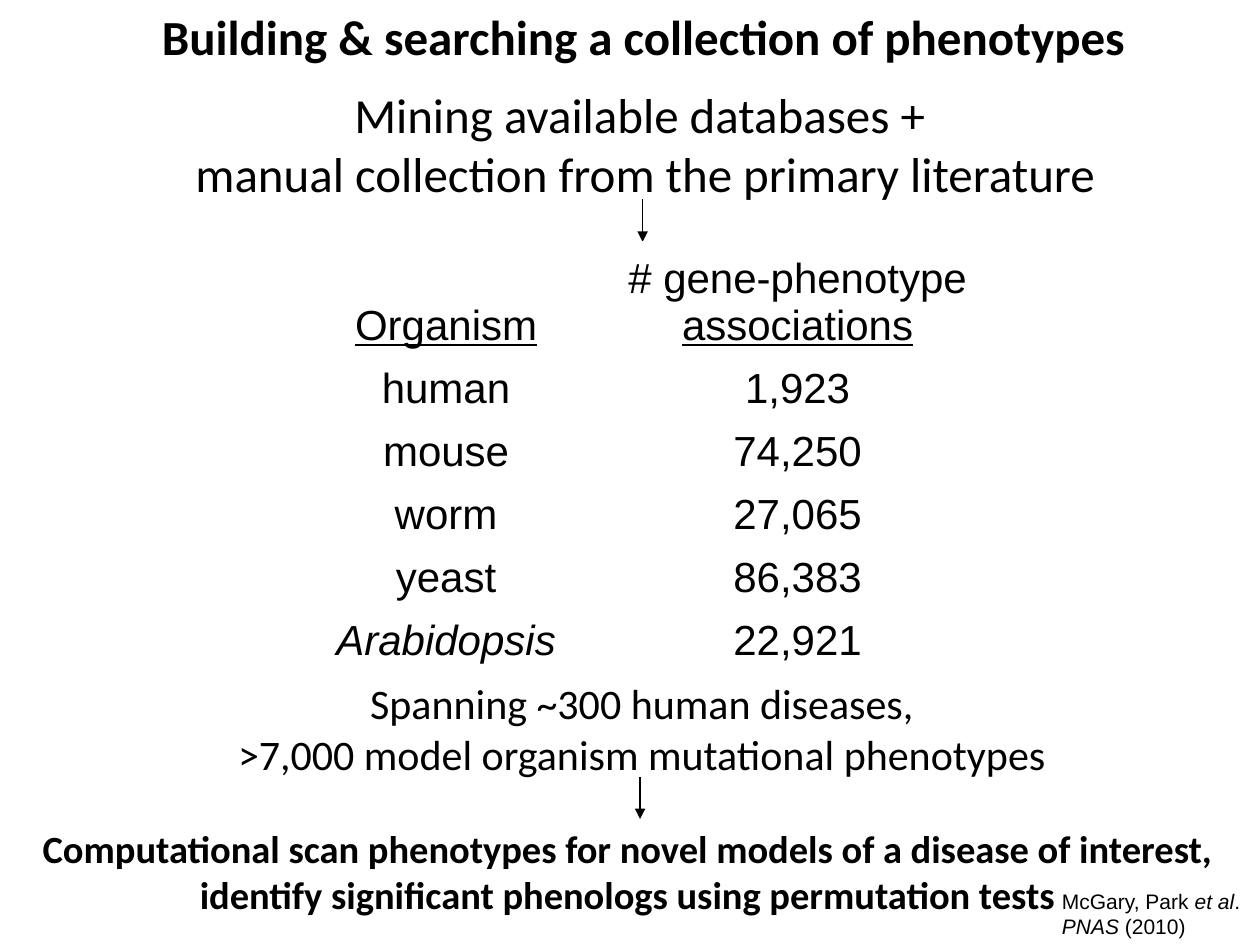
from pptx import Presentation
from pptx.dml.color import RGBColor
from pptx.enum.shapes import MSO_CONNECTOR
from pptx.enum.text import MSO_ANCHOR, MSO_AUTO_SIZE, PP_ALIGN
from pptx.oxml.ns import qn
from pptx.util import Inches, Pt
from lxml.etree import SubElement

BLACK = RGBColor(0, 0, 0)
ORGANISM_ROWS = [
    ("human", "1,923"),
    ("mouse", "74,250"),
    ("worm", "27,065"),
    ("yeast", "86,383"),
    ("Arabidopsis", "22,921"),
]


def add_span(para, text, size, font="Calibri", **styles):
    """Add one run; styles are font attributes such as bold or italic."""
    span = para.add_run()
    span.text = text
    span.font.name = font
    span.font.size = Pt(size)
    span.font.color.rgb = BLACK
    for name, value in styles.items():
        setattr(span.font, name, value)


def place(box, left, top, width, height):
    box.left, box.top = Inches(left), Inches(top)
    box.width, box.height = Inches(width), Inches(height)


def write_lines(box, lines, size, align=PP_ALIGN.CENTER, font="Calibri", bold=False):
    """Write paragraphs, each given as a list of (text, italic) spans."""
    frame = box.text_frame
    frame.word_wrap = False
    frame.auto_size = MSO_AUTO_SIZE.SHAPE_TO_FIT_TEXT
    frame.vertical_anchor = MSO_ANCHOR.TOP
    for index, spans in enumerate(lines):
        para = frame.add_paragraph() if index else frame.paragraphs[0]
        para.alignment = align
        for text, italic in spans:
            add_span(para, text, size, font, bold=bold, italic=italic)


def add_text(page, bounds, lines, size, **options):
    box = page.shapes.add_textbox(*map(Inches, bounds))
    write_lines(box, lines, size, **options)


def add_down_arrow(page, x, top, bottom):
    arrow = page.shapes.add_connector(
        MSO_CONNECTOR.STRAIGHT, Inches(x), Inches(top), Inches(x), Inches(bottom))
    arrow.line.color.rgb = BLACK
    arrow.line.width = Pt(0.75)
    SubElement(arrow.line._get_or_add_ln(), qn("a:tailEnd"), type="triangle")
    SubElement(arrow._element.spPr, qn("a:effectLst"))


def write_cell(cell, spans):
    """Write (text, styles) spans centred at the bottom of an unfilled cell."""
    cell.fill.background()
    cell.vertical_anchor = MSO_ANCHOR.BOTTOM
    para = cell.text_frame.paragraphs[0]
    para.alignment = PP_ALIGN.CENTER
    for text, styles in spans:
        add_span(para, text, 24, "Arial", **styles)


def add_association_table(page):
    row_count = len(ORGANISM_ROWS) + 1
    table = page.shapes.add_table(
        row_count, 2, Inches(2.5), Inches(1.92), Inches(5.58), Inches(3.13)).table
    table.first_row = False
    table.horz_banding = False
    for column, width in zip(table.columns, (2.08, 3.5)):
        column.width = Inches(width)
    for index, row in enumerate(table.rows):
        row.height = Inches(0.46 if index else 0.83)

    underlined = {"underline": True}
    write_cell(table.cell(0, 0), [("Organism", underlined)])
    write_cell(table.cell(0, 1),
               [("# gene-phenotype", {}), (" associations", underlined)])
    for index, (organism, count) in enumerate(ORGANISM_ROWS, start=1):
        styles = {"italic": organism == "Arabidopsis"}
        write_cell(table.cell(index, 0), [(organism, styles)])
        write_cell(table.cell(index, 1), [(count, {})])


def main():
    deck = Presentation()
    deck.slide_width, deck.slide_height = Inches(10), Inches(7.5)
    page = deck.slides.add_slide(deck.slide_layouts[5])

    title = page.shapes.title
    place(title, 1.14, 0, 7.93, 0.57)
    write_lines(title, [[("Building & searching a collection of phenotypes", False)]],
                28, bold=True)

    add_down_arrow(page, 5.1, 1.58, 1.92)
    add_association_table(page)
    add_text(page, (1.76, 5.33, 6.67, 0.91), [
        [("Spanning ~300 human diseases,", False)],
        [(">7,000 model organism mutational phenotypes", False)],
    ], 24)
    add_text(page, (1.41, 0.62, 7.42, 1.04), [
        [("Mining available databases + ", False)],
        [("manual collection from the primary literature", False)],
    ], 28)
    add_text(page, (0.18, 6.5, 9.6, 0.84), [
        [("Computational scan phenotypes for novel models of a disease of interest,", False)],
        [("identify significant phenologs using permutation tests", False)],
    ], 22, bold=True)
    add_down_arrow(page, 5.08, 6.17, 6.5)
    add_text(page, (8.33, 7, 1.68, 0.5), [
        [("McGary, Park ", False), ("et al", True), (".", False)],
        [("PNAS ", True), ("(2010)", False)],
    ], 12, align=PP_ALIGN.LEFT, font="Arial")

    deck.save("out.pptx")


if __name__ == "__main__":
    main()
